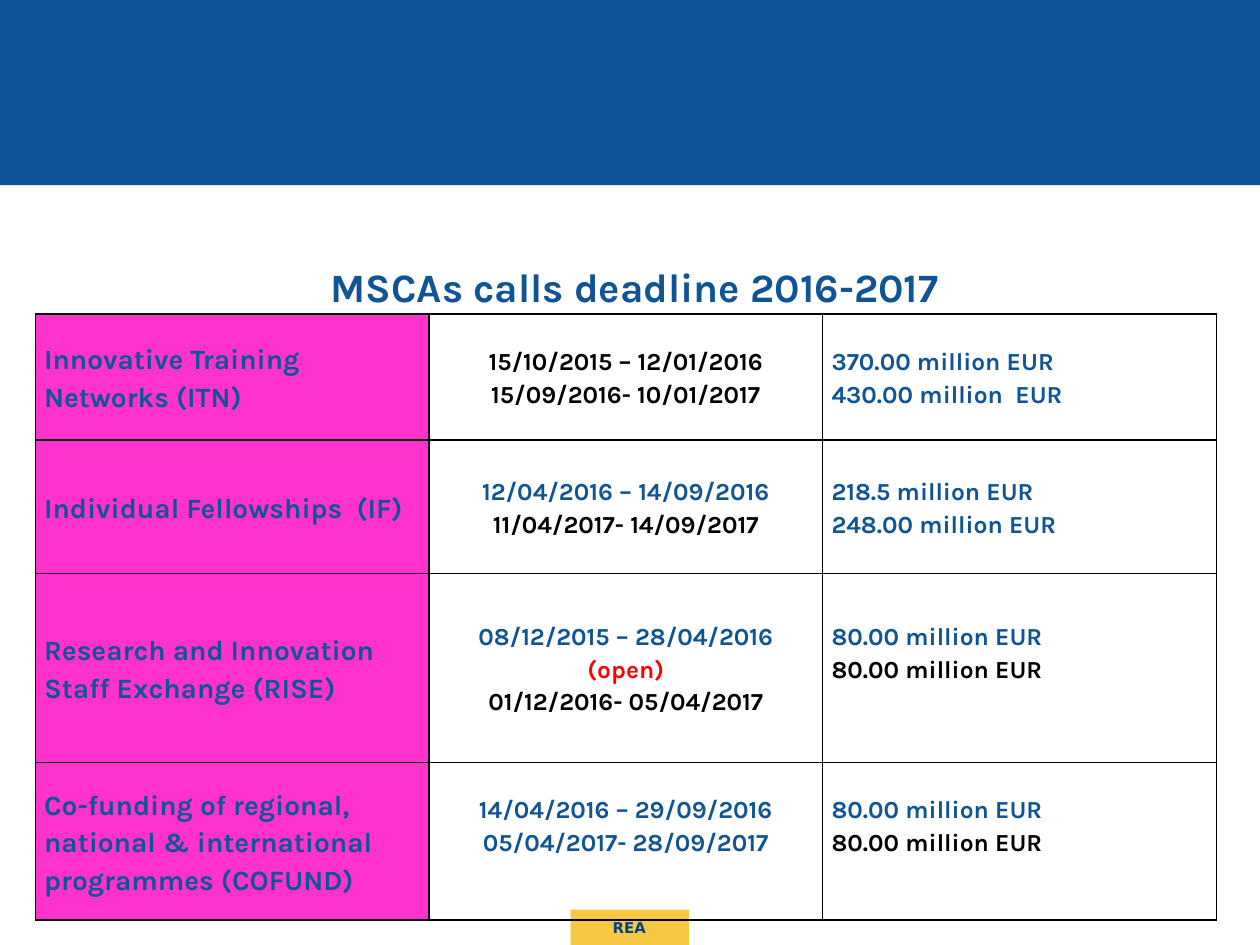
import pptx
import pptx.dml.color
import pptx.enum.shapes
import pptx.enum.text
import pptx.oxml
import pptx.oxml.ns
import pptx.util
from pptx.util import Inches

BLUE, BLACK, RED = "0F5494", "000000", "FF0000"
PINK, YELLOW, NAVY = "FF33CC", "F7C943", "004386"
ALIGN = pptx.enum.text.PP_ALIGN
MIDDLE = pptx.enum.text.MSO_ANCHOR.MIDDLE

TITLE = "MSCAs calls deadline 2016-2017"
COL_WIDTH = 3.125
LINE_GAP = 0.26  # room left under cells whose text sits one line higher
# Per row: height, action, dates, budgets, bottom margins of the three cells.
# Each paragraph is a list of (text, colour) runs.
ROWS = [
    (1, "Innovative Training Networks (ITN)",
     [[("15/10/2015 – 12/01/2016", BLACK)], [("15/09/2016- 10/01/2017", BLACK)]],
     [[("370.00 million EUR", BLUE)], [("430.00 million  EUR", BLUE)]],
     (0, 0, 0)),
    (1.06, "Individual Fellowships  (IF)",
     [[("12/04/2016 – 14/09/2016", BLUE)], [("11/04/2017- 14/09/2017", BLACK)]],
     [[("218.5 million EUR", BLUE)], [("248.00 million EUR", BLUE)]],
     (0, 0, 0)),
    (1.5, "Research and Innovation Staff Exchange (RISE)",
     [[("08/12/2015 – 28/04/2016 ", BLUE), ("(open)", RED)],
      [("01/12/2016- 05/04/2017", BLACK)]],
     [[("80.00 million EUR", BLUE)], [("80.00 million EUR", BLACK)]],
     (0, 0, LINE_GAP)),
    (1.25, "Co-funding of regional, national & international programmes (COFUND)",
     [[("14/04/2016 – 29/09/2016", BLUE)], [("05/04/2017- 28/09/2017", BLUE)]],
     [[("80.00 million EUR", BLUE)], [("80.00 million EUR", BLACK)]],
     (0, LINE_GAP, LINE_GAP)),
]


def rgb(value):
    return pptx.dml.color.RGBColor.from_string(value)


def add_run(p, text, size=14, color=BLUE, font="Karla"):
    r = p.add_run()
    r.text = text
    r.font.size = pptx.util.Pt(size)
    r.font.name = font
    r.font.bold = True
    r.font.color.rgb = rgb(color)


def fill_text(tf, paragraphs, align=ALIGN.CENTER, spacing=None, **style):
    """Write paragraphs, each a list of (text, colour) runs, into a text frame."""
    tf.word_wrap = True
    for i, runs in enumerate(paragraphs):
        p = tf.paragraphs[0] if i == 0 else tf.add_paragraph()
        p.alignment = align
        p.line_spacing = spacing
        for text, color in runs:
            add_run(p, text, color=color, **style)


def add_bar(s, left, top, width, height, color):
    sp = s.shapes.add_shape(pptx.enum.shapes.MSO_SHAPE.RECTANGLE, Inches(left),
                            Inches(top), Inches(width), Inches(height))
    sp.shadow.inherit = False
    sp.fill.solid()
    sp.fill.fore_color.rgb = rgb(color)
    sp.line.fill.background()


def add_borders(cell):
    tc_pr = cell._tc.get_or_add_tcPr()
    for i, side in enumerate("LRTB"):
        tc_pr.insert(i, pptx.oxml.parse_xml(
            f'<a:ln{side} {pptx.oxml.ns.nsdecls("a")} w="12700"><a:solidFill>'
            f'<a:srgbClr val="{BLACK}"/></a:solidFill></a:ln{side}>'))


def add_calls_table(s):
    height = sum(row[0] for row in ROWS)
    table = s.shapes.add_table(len(ROWS), 3, Inches(0.28), Inches(2.49),
                               Inches(3 * COL_WIDTH), Inches(height)).table
    table.first_row = table.horz_banding = False
    for column in table.columns:
        column.width = Inches(COL_WIDTH)
    for i, (row_height, action, dates, budgets, bottoms) in enumerate(ROWS):
        table.rows[i].height = Inches(row_height)
        columns = [([[(action, BLUE)]], ALIGN.LEFT, 16),
                   (dates, ALIGN.CENTER, 14),
                   (budgets, ALIGN.LEFT, 14)]
        for j, (paragraphs, align, size) in enumerate(columns):
            cell = table.cell(i, j)
            cell.vertical_anchor = MIDDLE
            cell.margin_left = cell.margin_right = Inches(0.07)
            cell.margin_top = 0
            cell.margin_bottom = Inches(bottoms[j])
            if j == 0:
                cell.fill.solid()
                cell.fill.fore_color.rgb = rgb(PINK)
            else:
                cell.fill.background()
            add_borders(cell)
            fill_text(cell.text_frame, paragraphs, align, 1.15, size=size)


def main():
    prs = pptx.Presentation()
    prs.slide_width, prs.slide_height = Inches(10), Inches(7.5)
    s = prs.slides.add_slide(prs.slide_layouts[5])

    add_bar(s, 4.53, 7.22, 0.94, 0.28, YELLOW)
    add_bar(s, 0, 0, 10, 1.47, BLUE)
    footer = s.shapes.add_textbox(Inches(4.51), Inches(7.2), Inches(0.97), Inches(0.32))
    footer.text_frame.vertical_anchor = MIDDLE
    fill_text(footer.text_frame, [[("REA", NAVY)]], size=8.5, font="DejaVu Sans")

    title = s.shapes.title
    title.left, title.top = Inches(1.93), Inches(1.94)
    title.width, title.height = Inches(6.22), Inches(1.05)
    title.text_frame.auto_size = pptx.enum.text.MSO_AUTO_SIZE.NONE
    title.text_frame.vertical_anchor = pptx.enum.text.MSO_ANCHOR.TOP
    fill_text(title.text_frame, [[(TITLE, BLUE)]], spacing=pptx.util.Pt(34), size=23)

    add_calls_table(s)
    prs.save("out.pptx")


if __name__ == "__main__":
    main()
